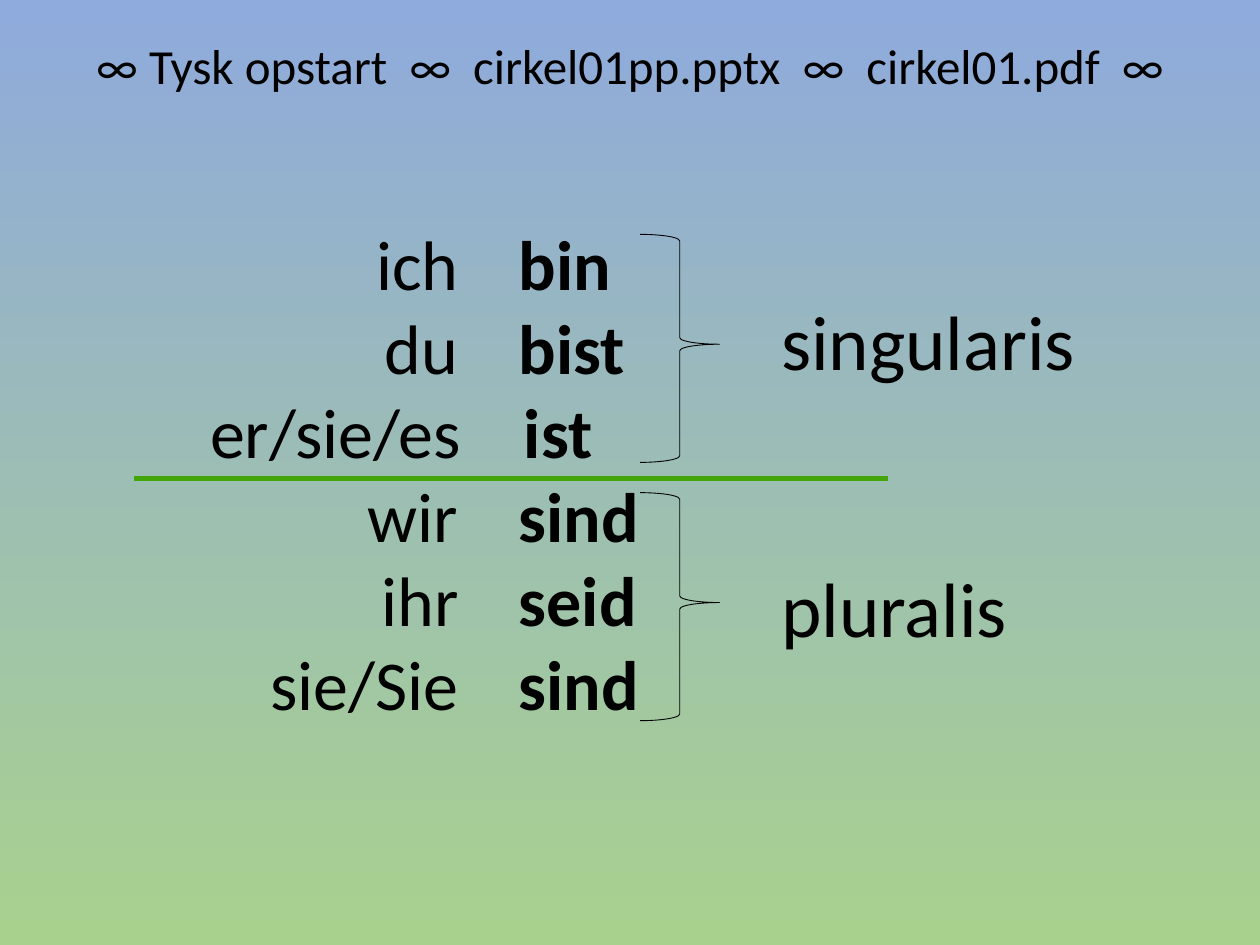
from lxml import etree
from pptx import Presentation, util as u
from pptx.dml.color import RGBColor
from pptx.enum import shapes, text
from pptx.oxml.ns import qn

BLACK = RGBColor(0x00, 0x00, 0x00)
GREEN = RGBColor(0x42, 0xA6, 0x0A)
SKY = RGBColor(0x8F, 0xAA, 0xDC)
MEADOW = RGBColor(0xA9, 0xD1, 0x8E)

TABS = [(1.97, "r"), (2.45, "l")]
WIDE_TABS = [(2.49, "l")]
VERBS = [
    ("\tich\t", "bin", TABS),
    ("\tdu\t", "bist", TABS),
    ("er/sie/es\t", "ist", WIDE_TABS),
    ("\twir\t", "sind", TABS),
    ("\tihr\t", "seid", TABS),
    ("\tsie/Sie\t", "sind", TABS),
]
TITLE = ["∞ Tysk opstart", "∞", "cirkel01pp.pptx", "∞", "cirkel01.pdf", "∞"]
NUMBERS = [("singularis", 18.6, 22.8), ("pluralis", 39.1, 44)]


class Board:
    """Slide styled in Calibri on a grid of 100 columns by 75 rows."""

    def __init__(self, prs):
        self.cell = prs.slide_width / 100
        self.slide = prs.slides.add_slide(prs.slide_layouts[6])

    def at(self, *cells):
        return [u.Emu(round(c * self.cell)) for c in cells]

    def background(self, top, bottom):
        fill = self.slide.background.fill
        fill.gradient()
        fill.gradient_angle = 270
        for stop, color, position in zip(fill.gradient_stops, (top, bottom), (0, 1)):
            stop.color.rgb = color
            stop.position = position

    def text(self, box, size, rows, align=text.PP_ALIGN.LEFT):
        tf = self.slide.shapes.add_textbox(*self.at(*box)).text_frame
        tf.word_wrap = True
        tf.auto_size = text.MSO_AUTO_SIZE.SHAPE_TO_FIT_TEXT
        for i, (runs, tabs) in enumerate(rows):
            p = tf.add_paragraph() if i else tf.paragraphs[0]
            p.alignment = align
            p.font.name, p.font.size = "Calibri", u.Pt(size)
            p.font.color.rgb = BLACK
            self.tabs(p, tabs)
            for words, bold, spacing in runs:
                r = p.add_run()
                r.text, r.font.bold = words, bold
                if spacing:
                    r._r.get_or_add_rPr().set("spc", str(round(spacing * 100)))

    def tabs(self, p, stops):
        if not stops:
            return
        tab_list = etree.Element(qn("a:tabLst"))
        for inches, align in stops:
            etree.SubElement(tab_list, qn("a:tab"), pos=str(u.Inches(inches)), algn=align)
        p._p.get_or_add_pPr().find(qn("a:defRPr")).addprevious(tab_list)

    def line(self, ends, color, width):
        sp = self.slide.shapes.add_connector(shapes.MSO_CONNECTOR.STRAIGHT, *self.at(*ends))
        sp.line.color.rgb, sp.line.width = color, u.Pt(width)
        etree.SubElement(sp._element.spPr, qn("a:effectLst"))

    def brace(self, box):
        sp = self.slide.shapes.add_shape(shapes.MSO_SHAPE.RIGHT_BRACE, *self.at(*box))
        sp.shadow.inherit = False
        sp.fill.background()
        sp.line.color.rgb, sp.line.width = BLACK, u.Pt(0.5)
        sp.adjustments[0], sp.adjustments[1] = 0.083, 0.482


def main():
    prs = Presentation()
    prs.slide_width, prs.slide_height = u.Inches(10), u.Inches(7.5)
    board = Board(prs)
    board.background(SKY, MEADOW)

    rows = [([(who, False, 0), (verb, True, 0)], tabs) for who, verb, tabs in VERBS]
    board.text((15.7, 17, 45.3, 41.4), 40, rows)
    board.line((10.6, 38, 70.5, 38), GREEN, 3)
    for label, brace_top, label_top in NUMBERS:
        board.brace((50.8, brace_top, 6.3, 18.1))
        board.text((61, label_top, 26.8, 8.4), 44, [([(label, False, 0)], None)])

    title = [(TITLE[0], False, 0)]
    for part in TITLE[1:]:
        title += [(" ", False, 6.3), (part, False, 0)]
    board.text((0, 2.3, 100, 5.7), 28, [(title, None)], text.PP_ALIGN.CENTER)
    prs.save("out.pptx")


if __name__ == "__main__":
    main()
